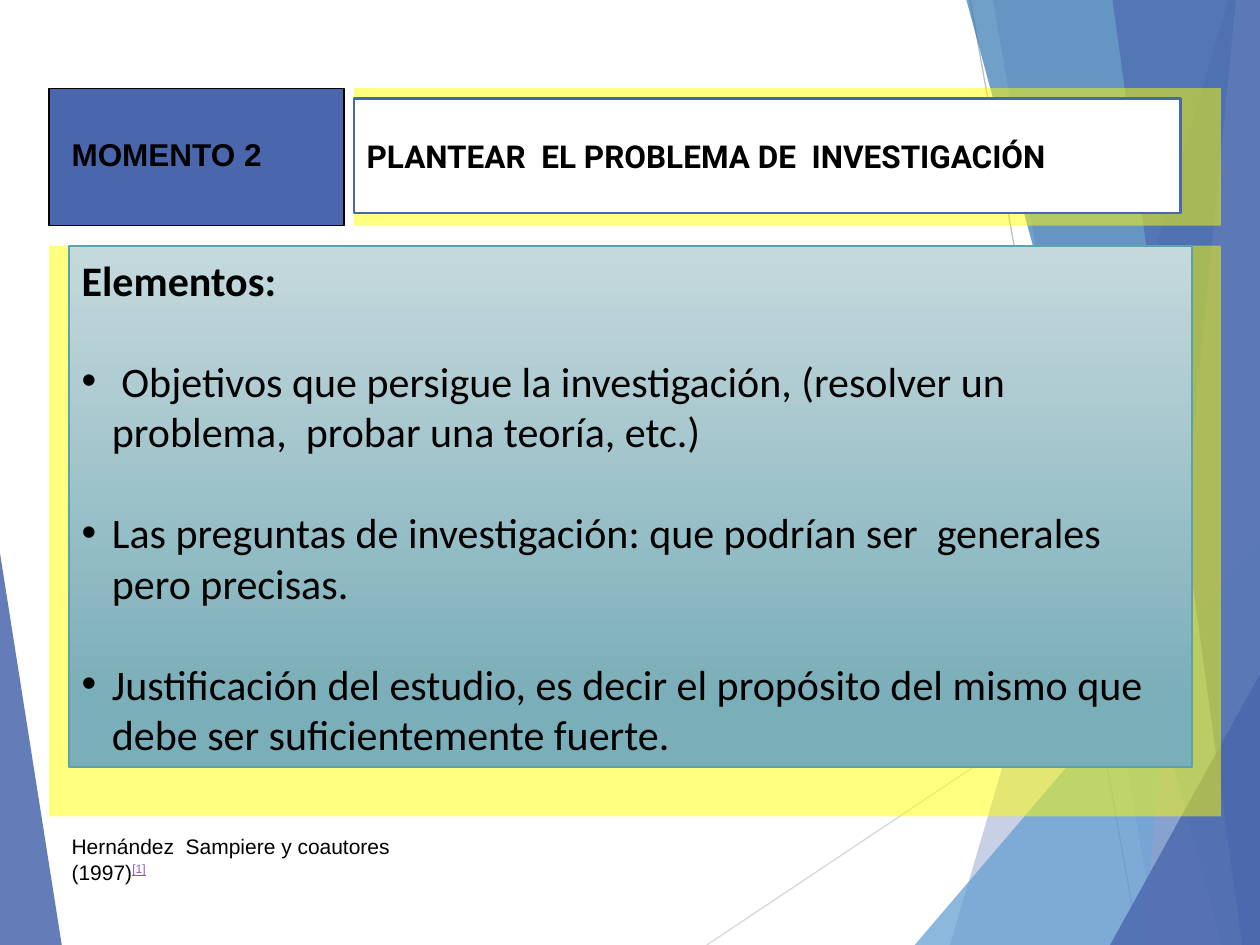
"""Build the slide on stating the research problem."""
from lxml import etree
from pptx import Presentation
from pptx.dml.color import RGBColor
from pptx.enum.shapes import MSO_CONNECTOR, MSO_SHAPE
from pptx.enum.text import MSO_ANCHOR, MSO_AUTO_SIZE, PP_ALIGN
from pptx.oxml.ns import qn
from pptx.util import Inches, Pt

RECT, STRAIGHT = MSO_SHAPE.RECTANGLE, MSO_CONNECTOR.STRAIGHT
TOP, MIDDLE = MSO_ANCHOR.TOP, MSO_ANCHOR.MIDDLE
LEFT, NO_FIT = PP_ALIGN.LEFT, MSO_AUTO_SIZE.NONE

THEME = {
    "blue": "4A66AC", "sky": "629DD1", "deep": "3477B2", "mist": "90A2CF",
    "yellow": "FFFF00", "white": "FFFFFF", "black": "000000",
    "teal": "5AA2AE", "teal_light": "C5D9DD", "teal_mid": "7AAEB8",
    "link": "9454C3", "ray": "D9D9D9", "ray_dark": "BFBFBF",
    "heading": 18, "body": 24, "source": 12,
}

MOMENT = "MOMENTO 2"
HEADING = "PLANTEAR  EL PROBLEMA DE  INVESTIGACIÓN"
ELEMENTS_LABEL = "Elementos:"
ELEMENTS = [
    " Objetivos que persigue la investigación, (resolver un problema,  probar una teoría, etc.)",
    "Las preguntas de investigación: que podrían ser  generales pero precisas.",
    "Justificación del estudio, es decir el propósito del mismo que debe ser suficientemente fuerte.",
]
SOURCE, SOURCE_MARK = "Hernández  Sampiere y coautores (1997)", "[1]"

WIDTH, HEIGHT = 10, 7.5
MARGIN, HEADING_LEFT, RIGHT = 0.39, 2.81, 9.69
HEADING_TOP, HEADING_HEIGHT, BODY_TOP = 0.7, 1.09, 1.95
BOXES = {
    "moment_panel": (MARGIN, HEADING_TOP, 2.34, HEADING_HEIGHT),
    "body_panel": (MARGIN, BODY_TOP, RIGHT - MARGIN, 4.53),
    "heading_panel": (HEADING_LEFT, HEADING_TOP, RIGHT - HEADING_LEFT, HEADING_HEIGHT),
    "moment": (0.47, 1.02, 2.3, 0.51),
    "heading": (HEADING_LEFT, 0.78, 6.56, 0.91),
    "elements": (0.55, BODY_TOP, 8.91, 4.14),
    "source": (0.47, 6.57, 3.13, 0.5),
}
RAYS = [((5.61, HEIGHT), (WIDTH, 4.57), "ray"), ((7.7, 0), (9.04, HEIGHT), "ray_dark")]
LEFT_FACET = [([(0, 4.39), (0.49, HEIGHT), (0, HEIGHT)], "blue", 85)]
RIGHT_FACETS = [
    ([(9.75, 0), (7.54, HEIGHT)], 0, "blue", 30),
    ([(7.88, 0), (9.19, HEIGHT)], 0, "blue", 20),
    ([(WIDTH, 4.29), (7.26, HEIGHT)], 4.29, "sky", 72),
    ([(7.67, 0), (9.7, HEIGHT)], 0, "deep", 70),
    ([(9.81, 0), (9.07, HEIGHT)], 0, "mist", 70),
    ([(8.83, 0), (9.86, HEIGHT)], 0, "blue", 65),
    ([(WIDTH, 5.35), (8.81, HEIGHT)], 5.35, "blue", 80),
]
FACETS = LEFT_FACET + [
    (edge + [(WIDTH, HEIGHT), (WIDTH, top)], color, opacity)
    for edge, top, color, opacity in RIGHT_FACETS
]


def rgb(name):
    """Return a theme colour."""
    return RGBColor.from_string(THEME[name])


def apply(target, values):
    """Set each attribute from a dict of format values."""
    for name, value in values.items():
        setattr(target, name, value)


def place(shape, box):
    """Move and size a shape by a box in inches."""
    apply(shape, dict(zip(("left", "top", "width", "height"), map(Inches, box))))


def paint(shape, color, opacity=100, line=None, weight=1):
    """Give a shape its fill, opacity and outline."""
    shape.shadow.inherit = False
    shape.fill.solid()
    shape.fill.fore_color.rgb = rgb(color)
    if opacity < 100:
        tint = shape.fill._xPr.find(f"{qn('a:solidFill')}/{qn('a:srgbClr')}")
        etree.SubElement(tint, qn("a:alpha")).set("val", str(opacity * 1000))
    if line:
        shape.line.color.rgb = rgb(line)
        shape.line.width = Pt(weight)
    else:
        shape.line.fill.background()


def panel(slide, part, **look):
    """Add a painted rectangle."""
    shape = slide.shapes.add_shape(RECT, *map(Inches, BOXES[part]))
    paint(shape, **look)
    return shape


def write(paragraph, text, font, size, color="black", bold=False):
    """Add a formatted run to a left-aligned paragraph."""
    paragraph.alignment = LEFT
    run = paragraph.add_run()
    run.text = text
    apply(run.font, {"name": font, "size": Pt(THEME[size]), "bold": bold})
    run.font.color.rgb = rgb(color)
    return run


def frame(shape, anchor):
    """Prepare a wrapping text frame and return it."""
    apply(shape.text_frame, {"word_wrap": True, "auto_size": NO_FIT, "vertical_anchor": anchor})
    return shape.text_frame


def text_box(slide, part):
    """Add a text box and return its first paragraph."""
    box = slide.shapes.add_textbox(*map(Inches, BOXES[part]))
    return frame(box, TOP).paragraphs[0]


def draw_background(slide):
    """Draw the rays and translucent facets."""
    for start, end, color in RAYS:
        ray = slide.shapes.add_connector(STRAIGHT, *map(Inches, start + end))
        ray.line.color.rgb = rgb(color)
        ray.line.width = Pt(0.75)
        etree.SubElement(ray._element.spPr, qn("a:effectLst"))
    for points, color, opacity in FACETS:
        corners = [(Inches(x), Inches(y)) for x, y in points]
        outline = slide.shapes.build_freeform(*corners[0])
        outline.add_line_segments(corners[1:], close=True)
        paint(outline.convert_to_shape(), color, opacity)


def draw_heading(slide):
    """Format the title placeholder and bring it forward."""
    title = slide.shapes.title
    place(title, BOXES["heading"])
    title.fill.solid()
    title.fill.fore_color.rgb = rgb("white")
    title.line.color.rgb = rgb("blue")
    title.line.width = Pt(1.5)
    write(frame(title, MIDDLE).paragraphs[0], HEADING, "Roboto", "heading", bold=True)
    slide.shapes._spTree.append(title._element)


def draw_elements(slide):
    """Draw the gradient panel with its bulleted elements."""
    card = panel(slide, "elements", color="teal_light", line="teal")
    card.fill.gradient()
    card.fill.gradient_angle = 270
    for stop, (position, color) in zip(
        card.fill.gradient_stops, [(0, "teal_light"), (0.88, "teal_mid")]
    ):
        stop.position = position
        stop.color.rgb = rgb(color)
    body = frame(card, MIDDLE)
    write(body.paragraphs[0], ELEMENTS_LABEL, "Calibri", "body", bold=True)
    for element in ELEMENTS:
        item = body.add_paragraph()
        item.space_before = Pt(29)
        write(item, element, "Calibri", "body")
        properties = item._p.get_or_add_pPr()
        properties.set("marL", str(Inches(0.24)))
        properties.set("indent", str(-Inches(0.24)))
        etree.SubElement(properties, qn("a:buFont")).set("typeface", "Arial")
        etree.SubElement(properties, qn("a:buChar")).set("char", "•")


def draw_source(slide):
    """Write the citation and its raised mark."""
    citation = text_box(slide, "source")
    write(citation, SOURCE, "Arial", "source")
    mark = write(citation, SOURCE_MARK, "Arial", "source", "link")
    mark.font.underline = True
    mark._r.get_or_add_rPr().set("baseline", "30000")


def main():
    """Assemble and save the slide."""
    deck = Presentation()
    apply(deck, {"slide_width": Inches(WIDTH), "slide_height": Inches(HEIGHT)})
    slide = deck.slides.add_slide(deck.slide_layouts[5])
    draw_background(slide)
    panel(slide, "moment_panel", color="blue", line="black", weight=0.75)
    for part in ("body_panel", "heading_panel"):
        panel(slide, part, color="yellow", opacity=50)
    write(text_box(slide, "moment"), MOMENT, "Arial", "heading", bold=True)
    draw_heading(slide)
    draw_elements(slide)
    draw_source(slide)
    deck.save("out.pptx")


if __name__ == "__main__":
    main()
